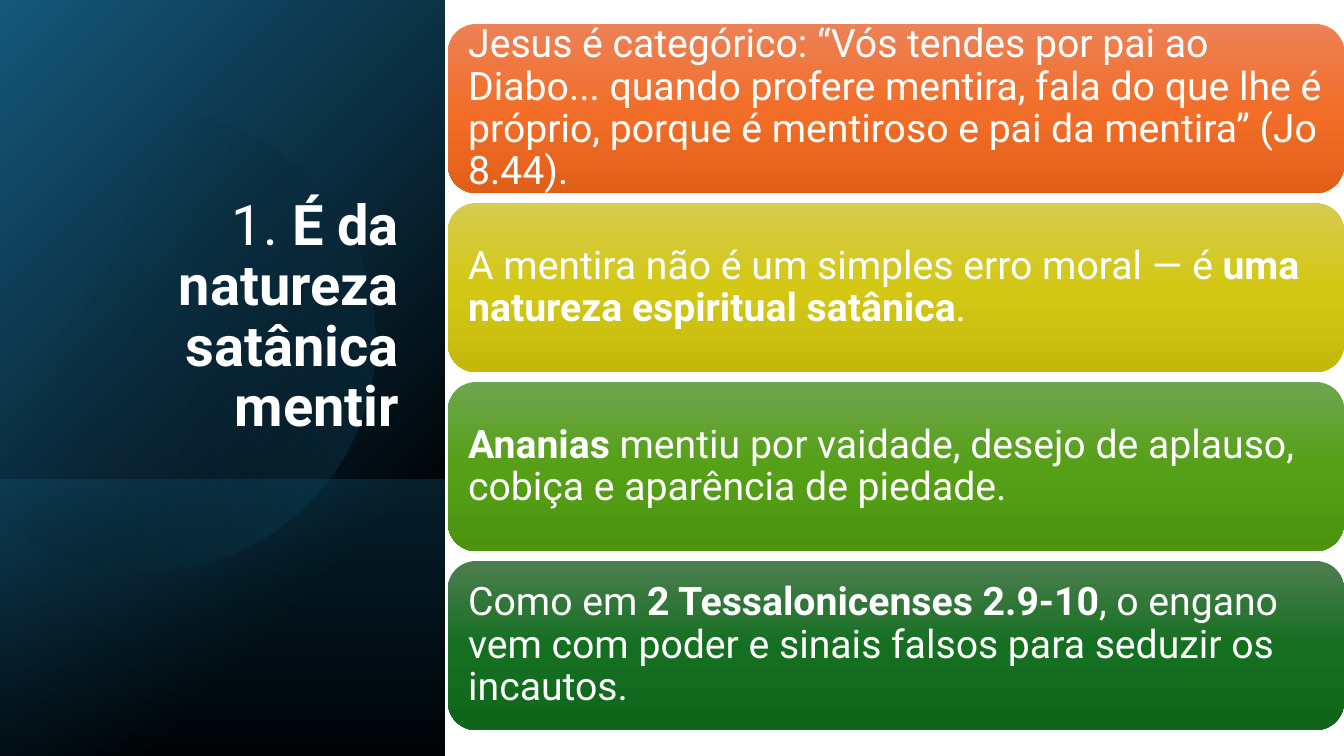
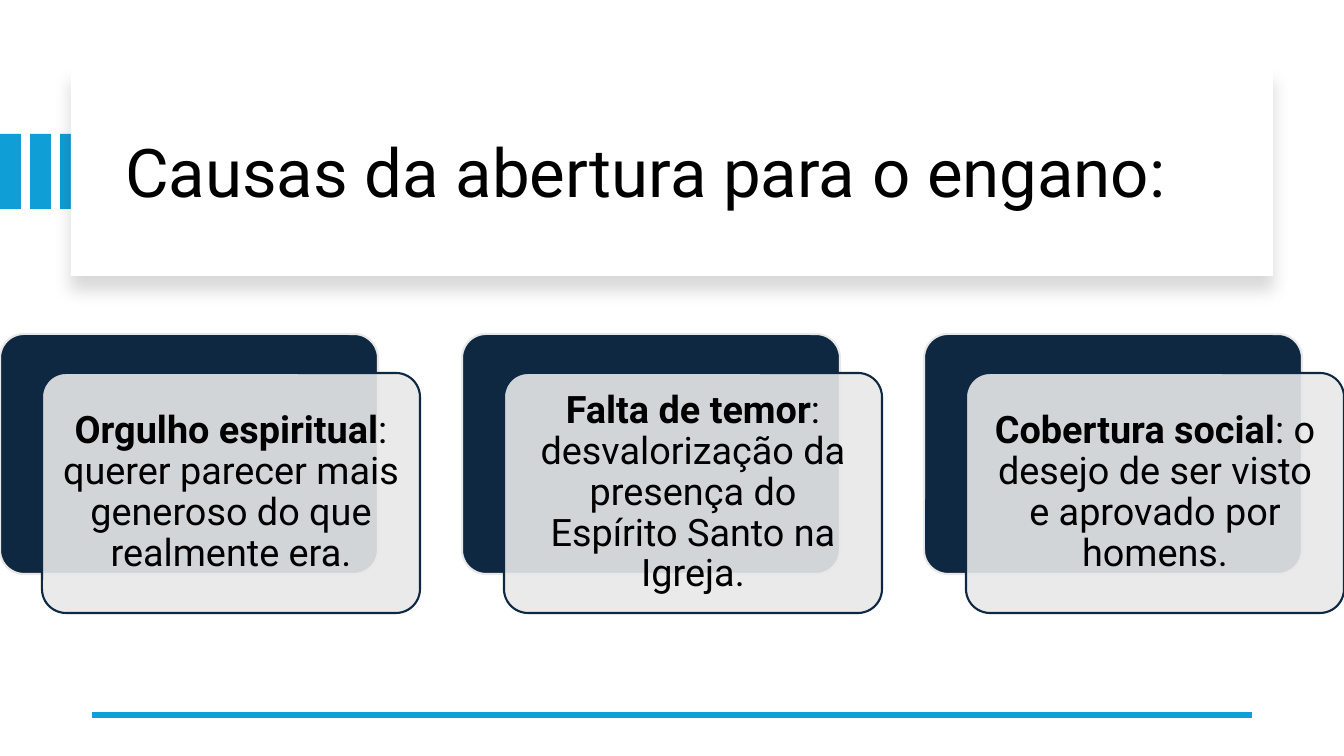
from math import cos, radians, sin

from lxml import etree
from pptx import Presentation
from pptx import util as u
from pptx.dml.color import RGBColor
from pptx.enum import shapes, text
from pptx.oxml.ns import qn

PX = 914400 / 100.8  # EMU per px
FONT = "Roboto"
WHITE, BLACK, TEAL = "FFFFFF", "000000", "156082"
BLUE, NAVY, GREY = "0F9ED5", "0E2841", "E8E8E8"
RECT = shapes.MSO_SHAPE.RECTANGLE
ROUND = shapes.MSO_SHAPE.ROUNDED_RECTANGLE
LEFT, CENTER, RIGHT = text.PP_ALIGN.LEFT, text.PP_ALIGN.CENTER, text.PP_ALIGN.RIGHT
MIDDLE, BOTTOM = text.MSO_ANCHOR.MIDDLE, text.MSO_ANCHOR.BOTTOM
rgb = RGBColor.from_string


def style(shape, box, fill=None, angle=0, opacity=100, line=None):
    """Place a shape; fill is a hex colour or a list of (position, hex, opacity)."""
    for side, length in zip(("left", "top", "width", "height"), box):
        setattr(shape, side, round(length * PX))
    if fill is None:
        return shape
    shape.shadow.inherit = False
    if isinstance(fill, str):
        shape.fill.solid()
        shape.fill.fore_color.rgb = rgb(fill)
        if opacity < 100:
            colour = next(shape.element.spPr.iter(qn("a:srgbClr")))
            etree.SubElement(colour, qn("a:alpha"), val=str(opacity * 1000))
    else:
        shape.fill.gradient()
        shape.fill.gradient_angle = -angle % 360
        stops = next(shape.element.spPr.iter(qn("a:gsLst")))
        stops.clear()
        for position, hex_colour, stop_opacity in fill:
            stop = etree.SubElement(stops, qn("a:gs"), pos=str(position * 1000))
            colour = etree.SubElement(stop, qn("a:srgbClr"), val=hex_colour)
            etree.SubElement(colour, qn("a:alpha"), val=str(stop_opacity * 1000))
    if line:
        shape.line.color.rgb = rgb(line)
        shape.line.width = u.Pt(1.5)
    else:
        shape.line.fill.background()
    return shape


def write(shape, runs, size, colour, align=LEFT, anchor=MIDDLE, inset=10):
    """Write one paragraph of (words, bold) runs."""
    frame = shape.text_frame
    layout = {"word_wrap": True, "auto_size": text.MSO_AUTO_SIZE.NONE, "vertical_anchor": anchor}
    layout.update({f"margin_{side}": round(inset * PX) for side in ("left", "top", "right", "bottom")})
    for key, value in layout.items():
        setattr(frame, key, value)
    paragraph = frame.paragraphs[0]
    paragraph.alignment, paragraph.line_spacing = align, 0.9
    for words, bold in runs:
        run = paragraph.add_run()
        run.text = words
        for key, value in {"name": FONT, "size": u.Pt(size), "bold": bold}.items():
            setattr(run.font, key, value)
        run.font.color.rgb = rgb(colour)


deck = Presentation()
deck.slide_width, deck.slide_height = round(1344 * PX), round(756 * PX)
title_only = deck.slide_layouts[5]

# Slide 1: dark panel
nature = deck.slides.add_slide(title_only)
draw = nature.shapes
style(draw.add_shape(RECT, 0, 0, 0, 0), (0, 0, 445, 756),
      [(0, "14587A", 100), (40, "0B2F42", 100), (76, "00060A", 100), (100, "00060A", 100)], 45)
style(draw.add_shape(RECT, 0, 0, 0, 0), (0, 480, 445, 276),
      [(0, TEAL, 29), (100, BLACK, 30)], 90)

# Glow: a disc cut off by the slide's left edge
center_x, center_y, radius = 144, 340, 231
rim = [(center_x + radius * cos(radians(a)), center_y + radius * sin(radians(a)))
       for a in range(-128, 129, 2)]
outline = draw.build_freeform(*rim[0], scale=PX)
outline.add_line_segments(rim[1:], close=True)
style(outline.convert_to_shape(), (0, 109, 375, 462), [(29, BLACK, 0), (100, TEAL, 35)], 30)

# Title on the panel
draw.element.append(draw.title.element)
style(draw.title, (65, 185, 344, 264))
write(draw.title, [("1. ", False), ("É da natureza satânica mentir", True)],
      40, WHITE, RIGHT, BOTTOM)

# Statement bars
statements = [
    (("ED8257", "F26E29", "E25F1A"),
     [("Jesus é categórico: “Vós tendes por pai ao Diabo... quando profere mentira, "
       "fala do que lhe é próprio, porque é mentiroso e pai da mentira” (Jo 8.44).", False)]),
    (("D5CB4E", "D4C815", "C4B90B"),
     [("A mentira não é um simples erro moral — é ", False),
      ("uma natureza espiritual satânica", True), (".", False)]),
    (("6DA64E", "56A017", "4C930F"),
     [("Ananias", True),
      (" mentiu por vaidade, desejo de aplauso, cobiça e aparência de piedade.", False)]),
    (("4D7E50", "156F21", "0F661B"),
     [("Como em ", False), ("2 Tessalonicenses 2.9-10", True),
      (", o engano vem com poder e sinais falsos para seduzir os incautos.", False)]),
]
for row, (shades, runs) in enumerate(statements):
    bar = style(draw.add_shape(ROUND, 0, 0, 0, 0), (448, 24 + 179 * row, 896, 169),
                [(50 * i, shade, 100) for i, shade in enumerate(shades)], 90)
    write(bar, runs, 28, WHITE, inset=12)

# Slide 2: stripes and banner
causes = deck.slides.add_slide(title_only)
draw = causes.shapes
for i in range(3):
    style(draw.add_shape(RECT, 0, 0, 0, 0), (30 * i, 134, 21, 75), BLUE)
banner = style(draw.add_shape(RECT, 0, 0, 0, 0), (71, 68, 1202, 208), WHITE)
shadow = etree.SubElement(banner.element.spPr.find(qn("a:effectLst")), qn("a:outerShdw"),
                          blurRad=str(u.Pt(11)), dist=str(u.Pt(10)), dir="5400000",
                          algn="t", rotWithShape="0")
shade = etree.SubElement(shadow, qn("a:srgbClr"), val=BLACK)
etree.SubElement(shade, qn("a:alpha"), val="15000")

# Title on the banner
draw.element.append(draw.title.element)
style(draw.title, (115, 90, 1122, 171))
write(draw.title, [("Causas da abertura para o engano:", False)], 48, BLACK)

# Footer rule
rule = draw.add_connector(shapes.MSO_CONNECTOR.STRAIGHT,
                          *(round(n * PX) for n in (1252, 715, 92, 715)))
rule.line.color.rgb = rgb(BLUE)
rule.line.width = u.Pt(4.5)
etree.SubElement(rule.element.spPr, qn("a:effectLst"))

# Cause cards, each over a navy backing
cards = [
    ("Orgulho espiritual", ": querer parecer mais generoso do que realmente era."),
    ("Falta de temor", ": desvalorização da presença do Espírito Santo na Igreja."),
    ("Cobertura social", ": o desejo de ser visto e aprovado por homens."),
]
for column, (cause, detail) in enumerate(cards):
    x = 462 * column
    backing = style(draw.add_shape(ROUND, 0, 0, 0, 0), (x, 334, 378, 240), NAVY, line=GREY)
    card = style(draw.add_shape(ROUND, 0, 0, 0, 0), (x + 42, 373, 378, 240), GREY,
                 opacity=90, line=NAVY)
    backing.adjustments[0] = card.adjustments[0] = 0.1
    write(card, [(cause, True), (detail, False)], 27, BLACK, CENTER, inset=11)

deck.save("out.pptx")
